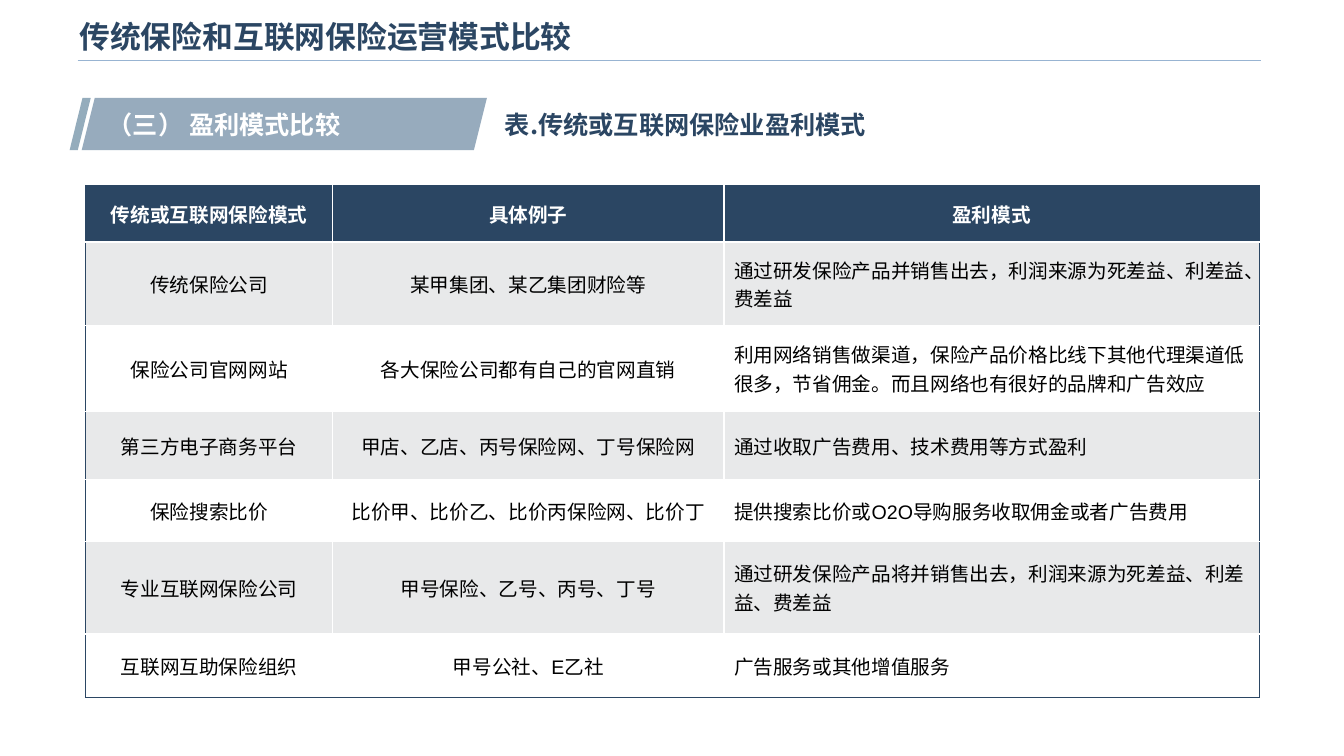
"""Build a slide that compares how insurance models earn a profit."""
from lxml import etree
from pptx import Presentation, util as u
from pptx.dml.color import RGBColor
from pptx.enum import shapes, text as t
from pptx.oxml.ns import qn

NAVY, WHITE, BLACK, STRIPE, RULE = "2B4663", "FFFFFF", "000000", "E8E9EA", "98B4D2"
CJK_FONT = "Noto Sans CJK SC"
HEADINGS = [
    ("传统保险和互联网保险运营模式比较", (0.69, 0.09, 10.71, 0.53), 22, "Arial", NAVY),
    ("（三） 盈利模式比较", (0.97, 1.03, 3.41, 0.4), 18, CJK_FONT, WHITE),
    ("表.传统或互联网保险业盈利模式", (4.91, 1.03, 4.22, 0.4), 18, CJK_FONT, NAVY),
]
BANNER = [
    ((0.69, 0.97, 0.21, 0.52), 0.613, "94ACBC"),
    ((0.81, 0.97, 4.02, 0.52), 0.25, "97ABBD"),
]
TABLE_BOX = (0.85, 1.84, 11.64, 5.08)
COLUMN_WIDTHS = [2.45, 3.88, 5.31]
ROW_HEIGHTS = [0.56, 0.83, 0.85, 0.68, 0.61, 0.92, 0.63]
ROWS = [
    ("传统或互联网保险模式", "具体例子", "盈利模式"),
    ("传统保险公司", "某甲集团、某乙集团财险等",
     "通过研发保险产品并销售出去，利润来源为死差益、利差益、费差益"),
    ("保险公司官网网站", "各大保险公司都有自己的官网直销",
     "利用网络销售做渠道，保险产品价格比线下其他代理渠道低很多，节省佣金。而且网络也有很好的品牌和广告效应"),
    ("第三方电子商务平台", "甲店、乙店、丙号保险网、丁号保险网", "通过收取广告费用、技术费用等方式盈利"),
    ("保险搜索比价", "比价甲、比价乙、比价丙保险网、比价丁", "提供搜索比价或O2O导购服务收取佣金或者广告费用"),
    ("专业互联网保险公司", "甲号保险、乙号、丙号、丁号",
     "通过研发保险产品将并销售出去，利润来源为死差益、利差益、费差益"),
    ("互联网互助保险组织", "甲号公社、E乙社", "广告服务或其他增值服务"),
]


def paint(color_format, color):
    color_format.rgb = RGBColor.from_string(color)


def inches(box):
    return [u.Inches(value) for value in box]


def write(frame, words, size=14, font="Arial", color=BLACK, bold=False, align=t.PP_ALIGN.LEFT):
    frame.word_wrap = True
    frame.vertical_anchor = t.MSO_ANCHOR.MIDDLE
    paragraph = frame.paragraphs[0]
    paragraph.alignment = align
    run = paragraph.add_run()
    run.text = words
    run.font.size, run.font.name, run.font.bold = u.Pt(size), font, bold
    paint(run.font.color, color)
    etree.SubElement(run.font._element, qn("a:ea"), typeface=CJK_FONT)


def add_border(cell, side, color):
    line = etree.SubElement(cell._tc.get_or_add_tcPr(), qn(f"a:ln{side}"), w=str(u.Pt(1)))
    fill = etree.SubElement(line, qn("a:solidFill"))
    etree.SubElement(fill, qn("a:srgbClr"), val=color)


def add_banner(slide):
    for box, slant, color in BANNER:
        shape = slide.shapes.add_shape(shapes.MSO_SHAPE.PARALLELOGRAM, *inches(box))
        shape.adjustments[0] = slant
        shape.shadow.inherit = False
        shape.fill.solid()
        paint(shape.fill.fore_color, color)
        shape.line.fill.background()


def add_rule(slide):
    rule = slide.shapes.add_connector(
        shapes.MSO_CONNECTOR.STRAIGHT, *inches((0.77, 0.6, 12.51, 0.6)))
    paint(rule.line.color, RULE)
    rule.line.width = u.Pt(1)
    etree.SubElement(rule._element.spPr, qn("a:effectLst"))


def add_comparison(slide):
    last_row, last_column = len(ROWS) - 1, len(COLUMN_WIDTHS) - 1
    table = slide.shapes.add_table(len(ROWS), len(COLUMN_WIDTHS), *inches(TABLE_BOX)).table
    for column, width in zip(table.columns, COLUMN_WIDTHS):
        column.width = u.Inches(width)
    for row, height in zip(table.rows, ROW_HEIGHTS):
        row.height = u.Inches(height)
    for i, row in enumerate(ROWS):
        header = i == 0
        for j, words in enumerate(row):
            cell = table.cell(i, j)
            outer = {"L": j == 0, "R": j == last_column, "T": header, "B": i == last_row}
            for side, is_outer in outer.items():
                add_border(cell, side, NAVY if is_outer else WHITE)
            cell.fill.solid()
            paint(cell.fill.fore_color, NAVY if header else STRIPE if i % 2 else WHITE)
            cell.vertical_anchor = t.MSO_ANCHOR.MIDDLE
            centred = header or j < last_column
            write(cell.text_frame, words, bold=header, color=WHITE if header else BLACK,
                  align=t.PP_ALIGN.CENTER if centred else t.PP_ALIGN.LEFT)


def main():
    presentation = Presentation()
    presentation.slide_width, presentation.slide_height = inches((13.33, 7.5))
    slide = presentation.slides.add_slide(presentation.slide_layouts[6])
    add_rule(slide)
    add_banner(slide)
    for words, box, size, font, color in HEADINGS:
        frame = slide.shapes.add_textbox(*inches(box)).text_frame
        write(frame, words, size=size, font=font, color=color, bold=True)
    add_comparison(slide)
    presentation.save("out.pptx")


if __name__ == "__main__":
    main()
